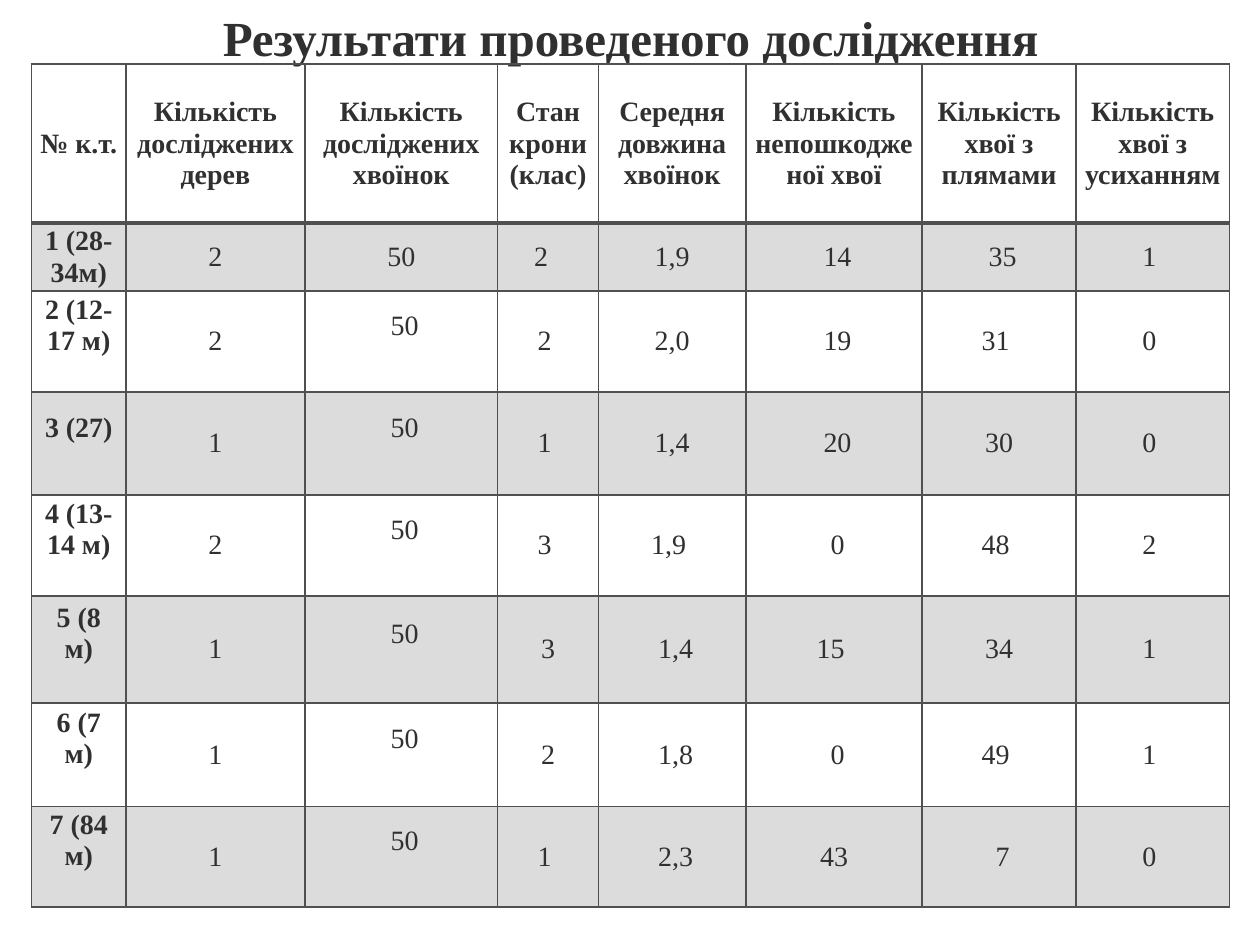
"""Build the slide with the table of pine needle survey results."""
from lxml.etree import SubElement
from pptx import Presentation
from pptx.dml.color import RGBColor
from pptx.enum.text import MSO_ANCHOR as Anchor, MSO_AUTO_SIZE as AutoSize, PP_ALIGN as Align
from pptx.oxml import parse_xml
from pptx.oxml.ns import nsdecls, qn
from pptx.util import Inches, Pt

TITLE = "Результати проведеного дослідження"
HEADERS = [
    "№ к.т.", "Кількість досліджених дерев", "Кількість досліджених хвоїнок",
    "Стан крони(клас)", "Середня довжина хвоїнок", "Кількість непошкодженої хвої",
    "Кількість хвої з плямами", "Кількість хвої з усиханням",
]
HARD_SPACE = "~"
RESULTS = [
    ["1 (28-34м)", "2", "50", "2 ~", "1,9", "~14", "~35", "1~"],
    ["2 (12-17 м)", "2", "~50", "2~", "2,0", "~19", "31~", "0~"],
    ["3 (27)", "1", "~50", "1~", "1,4", "~20", "30", "0~"],
    ["4 (13-14 м)", "2", "~50", "3~", "1,9~", "~0", "48~", "2~"],
    ["5 (8 м)", "1", "~50", "3", "~1,4", "15~", "34", "1~"],
    ["6 (7 м)", "1", "~50", "2", "~1,8", "~0", "49~", "1~"],
    ["7 (84 м)", "1", "~50", "1~", "~2,3", "43", "~7", "0~"],
]
COLUMN_WIDTHS = [0.75, 1.42, 1.53, 0.8, 1.17, 1.4, 1.22, 1.22]
ROW_HEIGHTS = [1.26, 0.54, 0.8, 0.82, 0.8, 0.85, 0.82, 0.8]
RAISED_COLUMNS = (0, 2)
RAISE = 0.25
FONT, INK, GRAY = "Times New Roman", "303030", "505050"


def color(value):
    return RGBColor.from_string(value)


def set_text(frame, text, size, bold):
    frame.text = text
    paragraph = frame.paragraphs[0]
    paragraph.alignment = Align.CENTER
    font = paragraph.font
    font.name, font.size, font.bold = FONT, Pt(size), bold
    font.color.rgb = color(INK)


def set_borders(cell, widths):
    properties = cell._tc.get_or_add_tcPr()
    for position, (side, width) in enumerate(widths.items()):
        properties.insert(position, parse_xml(
            f'<a:ln{side} {nsdecls("a")} w="{Pt(width)}"><a:solidFill>'
            f'<a:srgbClr val="{GRAY}"/></a:solidFill></a:ln{side}>'))


def shade(cell, banded):
    if not banded:
        cell.fill.background()
        return
    cell.fill.solid()
    cell.fill.fore_color.rgb = color(GRAY)
    fill_color = cell._tc.tcPr.find(".//" + qn("a:srgbClr"))
    SubElement(fill_color, qn("a:alpha"), val="20000")


def add_title(slide):
    title = slide.shapes.title
    title.left, title.top, title.width, title.height = map(Inches, (0.17, 0.01, 9.67, 0.57))
    frame = title.text_frame
    frame.auto_size = AutoSize.SHAPE_TO_FIT_TEXT
    frame.vertical_anchor = Anchor.TOP
    set_text(frame, TITLE, 28, True)


def add_results(slide):
    rows = [HEADERS] + RESULTS
    table = slide.shapes.add_table(
        len(rows), len(HEADERS), Inches(0.25), Inches(0.51),
        Inches(sum(COLUMN_WIDTHS)), Inches(sum(ROW_HEIGHTS))).table
    table.first_row = table.horz_banding = False
    for column, width in zip(table.columns, COLUMN_WIDTHS):
        column.width = Inches(width)
    for row, height in zip(table.rows, ROW_HEIGHTS):
        row.height = Inches(height)
    for r, row in enumerate(rows):
        for c, text in enumerate(row):
            cell = table.cell(r, c)
            set_text(cell.text_frame, text.replace(HARD_SPACE, chr(160)), 16, r == 0 or c == 0)
            cell.vertical_anchor = Anchor.MIDDLE
            cell.margin_left = cell.margin_right = Inches(0.07)
            cell.margin_top = 0
            cell.margin_bottom = Inches(RAISE if r > 1 and c in RAISED_COLUMNS else 0)
            shade(cell, r % 2 == 1)
            set_borders(cell, {"L": 1, "R": 1, "T": 2 if r == 1 else 1, "B": 2 if r == 0 else 1})


def main():
    presentation = Presentation()
    presentation.slide_width, presentation.slide_height = Inches(10), Inches(7.5)
    slide = presentation.slides.add_slide(presentation.slide_layouts[5])
    add_title(slide)
    add_results(slide)
    presentation.save("out.pptx")


if __name__ == "__main__":
    main()
